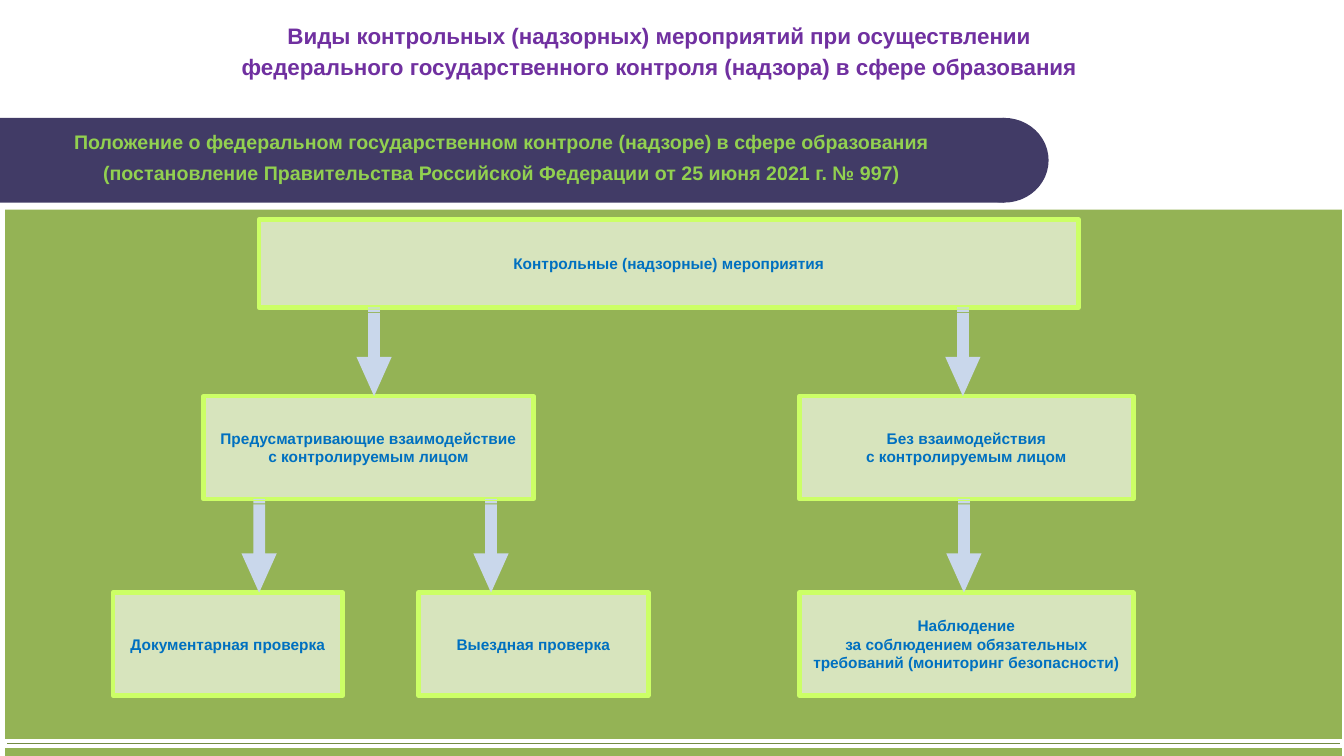
from pptx import Presentation
from pptx import util as u
from pptx.dml.color import RGBColor
from pptx.enum import shapes, text

WIDTH, HEIGHT = 13.33, 7.5

TITLE = ("Виды контрольных (надзорных) мероприятий при осуществлении\n"
         "федерального государственного контроля (надзора) в сфере образования")
REGULATION = ("Положение о федеральном государственном контроле (надзоре) в сфере образования\n"
              "(постановление Правительства Российской Федерации от 25 июня 2021 г. № 997)")

# Levels of the scheme: top, height, then boxes as (left, width, wording)
LEVELS = [
    (2.18, 0.87, [(2.57, 8.13, "Контрольные (надзорные) мероприятия")]),
    (3.93, 1.02, [(2.02, 3.27, "Предусматривающие взаимодействие\nс контролируемым лицом"),
                  (7.93, 3.31, "Без взаимодействия\nс контролируемым лицом")]),
    (5.88, 1.02, [(1.12, 2.28, "Документарная проверка"),
                  (4.15, 2.28, "Выездная проверка"),
                  (7.93, 3.31, "Наблюдение\nза соблюдением обязательных "
                               "требований (мониторинг безопасности)")]),
]
# Centres of the arrows that leave each level
ARROW_CENTRES = [(3.71, 9.55), (2.57, 4.87, 9.56)]
ARROW_THICKNESS = 0.35
ARROW_ADJUSTMENTS = (0.333, 1.114)

BANNER_TOP, BANNER_HEIGHT, BANNER_WIDTH, CAP_WIDTH = 1.17, 0.84, 9.96, 0.88
PANEL_LEFT, PANEL_TOP, PANEL_WIDTH = 0.05, 2.08, 13.26
STRIPE_TOP, STRIPE_HEIGHT = 7.35, 0.05
LINE_WIDTH = 3.35

Kind = shapes.MSO_SHAPE


def rgb(hex_colour):
    return RGBColor.from_string(hex_colour)


def add_figure(slide, kind, box, fill, line=None):
    figure = slide.shapes.add_shape(kind, *map(u.Inches, box))
    figure.shadow.inherit = False
    figure.fill.solid()
    figure.fill.fore_color.rgb = rgb(fill)
    if line:
        figure.line.color.rgb = rgb(line)
        figure.line.width = u.Pt(LINE_WIDTH)
    else:
        figure.line.fill.background()
    return figure


def write(holder, wording, size, colour, anchor, spacing=None):
    frame = holder.text_frame
    frame.text = wording
    frame.word_wrap = True
    frame.auto_size = text.MSO_AUTO_SIZE.NONE
    frame.vertical_anchor = anchor
    font_format = {"name": "Arial", "size": u.Pt(size), "bold": True}
    for paragraph in frame.paragraphs:
        paragraph.alignment = text.PP_ALIGN.CENTER
        if spacing:
            paragraph.line_spacing = u.Pt(spacing)
        for key, value in font_format.items():
            setattr(paragraph.font, key, value)
        paragraph.font.color.rgb = rgb(colour)


def add_heading(slide):
    title = slide.shapes.title
    place = {"left": 1.53, "top": 0.13, "width": 10.02, "height": 0.72}
    for side, length in place.items():
        setattr(title, side, u.Inches(length))
    write(title, TITLE, 16, "7030A0", text.MSO_ANCHOR.TOP, 22)

    cap_left = BANNER_WIDTH - CAP_WIDTH / 2
    for kind, left, width in ((Kind.RECTANGLE, 0, BANNER_WIDTH),
                              (Kind.OVAL, cap_left, CAP_WIDTH)):
        add_figure(slide, kind, (left, BANNER_TOP, width, BANNER_HEIGHT), "413B66")
    regulation = slide.shapes.add_textbox(
        *map(u.Inches, (0.13, BANNER_TOP, 9.69, 0.72)))
    write(regulation, REGULATION, 14, "92D050", text.MSO_ANCHOR.TOP, 22)


def add_scheme(slide):
    add_figure(slide, Kind.RECTANGLE,
               (PANEL_LEFT, PANEL_TOP, PANEL_WIDTH, HEIGHT - PANEL_TOP), "94B355")
    add_figure(slide, Kind.RECTANGLE,
               (PANEL_LEFT, STRIPE_TOP, PANEL_WIDTH, STRIPE_HEIGHT), "738A42", "FFFFFF")

    for top, height, activities in LEVELS:
        for left, width, wording in activities:
            activity = add_figure(slide, Kind.RECTANGLE, (left, top, width, height),
                                  "D7E4BD", "CCFF66")
            write(activity, wording, 11, "0070C0", text.MSO_ANCHOR.MIDDLE)

    for upper, lower, centres in zip(LEVELS, LEVELS[1:], ARROW_CENTRES):
        start, end = upper[0] + upper[1], lower[0]
        length, middle = end - start, (start + end) / 2
        for centre in centres:
            arrow = add_figure(slide, Kind.STRIPED_RIGHT_ARROW,
                               (centre - length / 2, middle - ARROW_THICKNESS / 2,
                                length, ARROW_THICKNESS), "C9D7EB")
            arrow.rotation = 90
            for index, value in enumerate(ARROW_ADJUSTMENTS):
                arrow.adjustments[index] = value


def main():
    deck = Presentation()
    deck.slide_width, deck.slide_height = u.Inches(WIDTH), u.Inches(HEIGHT)
    slide = deck.slides.add_slide(deck.slide_layouts.get_by_name("Title Only"))
    add_heading(slide)
    add_scheme(slide)
    deck.save("out.pptx")


if __name__ == "__main__":
    main()
